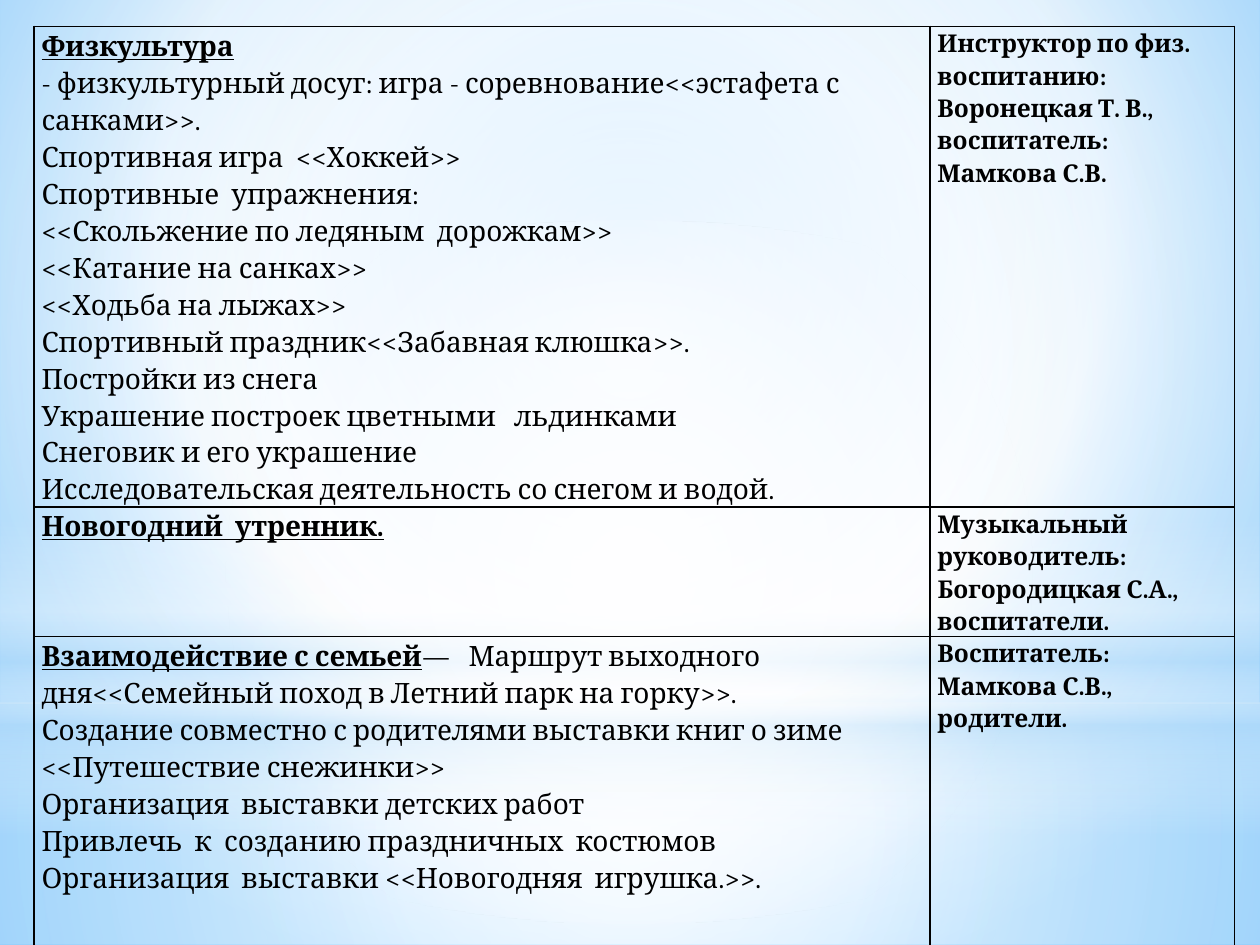
"""Builds a winter activity plan slide: a borderless sky backdrop and a two-column table."""
from dataclasses import dataclass
from typing import Optional

from lxml.etree import SubElement
from pptx import Presentation
from pptx.dml.color import RGBColor
from pptx.enum.shapes import MSO_SHAPE
from pptx.oxml import parse_xml
from pptx.oxml.ns import nsdecls, qn
from pptx.util import Inches, Pt

WIDTH, HEIGHT = Inches(10), Inches(7.5)
FONT = "Cambria"
COLOURS = {"ink": "000000", "white": "FFFFFF", "mist": "B4DCFA", "sky": "9ED5FF", "deep": "5BB9FF"}
CENTRE = (50, 50, 50, 50)


@dataclass(frozen=True)
class Stop:
    position: int
    colour: str
    opacity: int = 100


@dataclass(frozen=True)
class Glow:
    """A full-width gradient shape; top and height are shares of the slide."""
    shape: MSO_SHAPE
    top: float
    height: float
    stops: tuple[Stop, ...]
    focus: Optional[tuple[int, ...]] = CENTRE


@dataclass(frozen=True)
class Activity:
    """One table row; height is a share of the slide."""
    height: float
    heading: str
    opening: str
    items: tuple[str, ...]
    staff: str
    closed: bool = True


BACKDROP = (Stop(0, "sky"), Stop(60, "white"), Stop(100, "deep"))
GLOWS = (
    Glow(MSO_SHAPE.RECTANGLE, 0.744, 0.256,
         (Stop(0, "white", 91), Stop(37, "white", 76), Stop(100, "mist", 79))),
    Glow(MSO_SHAPE.RECTANGLE, 0, 0.744,
         (Stop(0, "white", 89), Stop(48, "white", 62), Stop(100, "mist", 79))),
    Glow(MSO_SHAPE.RECTANGLE, 0.55, 0.333,
         (Stop(0, "white", 0), Stop(29, "white", 30), Stop(45, "mist", 40),
          Stop(55, "white", 26), Stop(65, "mist", 60), Stop(100, "white", 0)), None),
    Glow(MSO_SHAPE.OVAL, 0.233, 0.744, (Stop(0, "white"), Stop(56, "white", 0))),
)
TABLE_LEFT, TABLE_TOP = 0.027, 0.028
COLUMNS = (0.711, 0.242)
ACTIVITIES = (
    Activity(0.508, "Физкультура", "", (
        "- физкультурный досуг: игра - соревнование<<эстафета с санками>>.",
        "Спортивная игра  <<Хоккей>>",
        "Спортивные  упражнения:",
        "<<Скольжение по ледяным  дорожкам>>",
        "<<Катание на санках>>",
        "<<Ходьба на лыжах>>",
        "Спортивный праздник<<Забавная клюшка>>.",
        "Постройки из снега",
        "Украшение построек цветными   льдинками",
        "Снеговик и его украшение",
        "Исследовательская деятельность со снегом и водой.",
    ), "Инструктор по физ. воспитанию: Воронецкая Т. В., воспитатель: Мамкова С.В."),
    Activity(0.137, "Новогодний  утренник.", "", (),
             "Музыкальный руководитель: Богородицкая С.А., воспитатели."),
    Activity(0.52, "Взаимодействие с семьей",
             "—   Маршрут выходного дня<<Семейный поход в Летний парк на горку>>.", (
                 "Создание совместно с родителями выставки книг о зиме <<Путешествие снежинки>>",
                 "Организация  выставки детских работ",
                 "Привлечь  к  созданию праздничных  костюмов",
                 "Организация  выставки <<Новогодняя  игрушка.>>.",
             ), "Воспитатель: Мамкова С.В., родители.", closed=False),
)


def set_gradient(owner, stops: tuple[Stop, ...], focus: Optional[tuple[int, ...]]) -> None:
    """Replace the gradient below an element with the given stops."""
    marks = "".join(
        f'<a:gs pos="{stop.position * 1000}"><a:srgbClr val="{COLOURS[stop.colour]}">'
        f'<a:alpha val="{stop.opacity * 1000}"/></a:srgbClr></a:gs>' for stop in stops)
    if focus:
        left, top, right, bottom = (side * 1000 for side in focus)
        course = (f'<a:path path="circle"><a:fillToRect l="{left}" t="{top}" '
                  f'r="{right}" b="{bottom}"/></a:path>')
    else:
        course = '<a:lin ang="5400000" scaled="1"/>'
    old = owner.find(".//" + qn("a:gradFill"))
    new = parse_xml(f'<a:gradFill {nsdecls("a")} rotWithShape="1">'
                    f'<a:gsLst>{marks}</a:gsLst>{course}</a:gradFill>')
    old.getparent().replace(old, new)


def draw_glow(page, glow: Glow) -> None:
    """Draw one soft band across the slide."""
    shape = page.shapes.add_shape(glow.shape, 0, int(HEIGHT * glow.top),
                                  WIDTH, int(HEIGHT * glow.height))
    shape.shadow.inherit = False
    shape.line.fill.background()
    shape.fill.gradient()
    set_gradient(shape.element, glow.stops, glow.focus)


def add_span(para, text: str, size: int, bold: bool = False, underline: bool = False) -> None:
    """Add one formatted run."""
    span = para.add_run()
    span.text = text
    font = span.font
    font.name, font.size, font.bold, font.underline = FONT, Pt(size), bold, underline
    font.color.rgb = RGBColor.from_string(COLOURS["ink"])


def style_cell(cell, closed: bool) -> None:
    """Set margins, borders and an empty fill."""
    cell.margin_left = cell.margin_right = Inches(0.06)
    cell.margin_top = cell.margin_bottom = 0
    properties = cell._tc.get_or_add_tcPr()
    for side in ("L", "R", "T", "B") if closed else ("L", "R", "T"):
        line = SubElement(properties, qn(f"a:ln{side}"), w=str(Pt(1)))
        fill = SubElement(line, qn("a:solidFill"))
        SubElement(fill, qn("a:srgbClr"), val=COLOURS["ink"])
    cell.fill.background()


def fill_row(table, index: int, activity: Activity) -> None:
    """Write one activity and the people in charge of it."""
    table.rows[index].height = int(HEIGHT * activity.height)
    plan, staff = table.cell(index, 0), table.cell(index, 1)
    heading = plan.text_frame.paragraphs[0]
    add_span(heading, activity.heading, 16, bold=True, underline=True)
    if activity.opening:
        add_span(heading, activity.opening, 16)
    for item in activity.items:
        add_span(plan.text_frame.add_paragraph(), item, 16)
    add_span(staff.text_frame.paragraphs[0], activity.staff, 14, bold=True)
    for cell in (plan, staff):
        style_cell(cell, activity.closed)
        for para in cell.text_frame.paragraphs:
            para.line_spacing = 1.15


def draw_table(page) -> None:
    """Draw the activity table."""
    frame = page.shapes.add_table(
        len(ACTIVITIES), len(COLUMNS), int(WIDTH * TABLE_LEFT), int(HEIGHT * TABLE_TOP),
        int(WIDTH * sum(COLUMNS)), int(HEIGHT * sum(row.height for row in ACTIVITIES)))
    table = frame.table
    table.first_row = table.horz_banding = False
    for column, share in zip(table.columns, COLUMNS):
        column.width = int(WIDTH * share)
    for index, activity in enumerate(ACTIVITIES):
        fill_row(table, index, activity)


def main() -> None:
    """Build and save the deck."""
    deck = Presentation()
    deck.slide_width, deck.slide_height = WIDTH, HEIGHT
    page = deck.slides.add_slide(deck.slide_layouts[6])
    page.background.fill.gradient()
    set_gradient(page.element, BACKDROP, (20, 10, 20, 60))
    for glow in GLOWS:
        draw_glow(page, glow)
    draw_table(page)
    deck.save("out.pptx")


if __name__ == "__main__":
    main()
